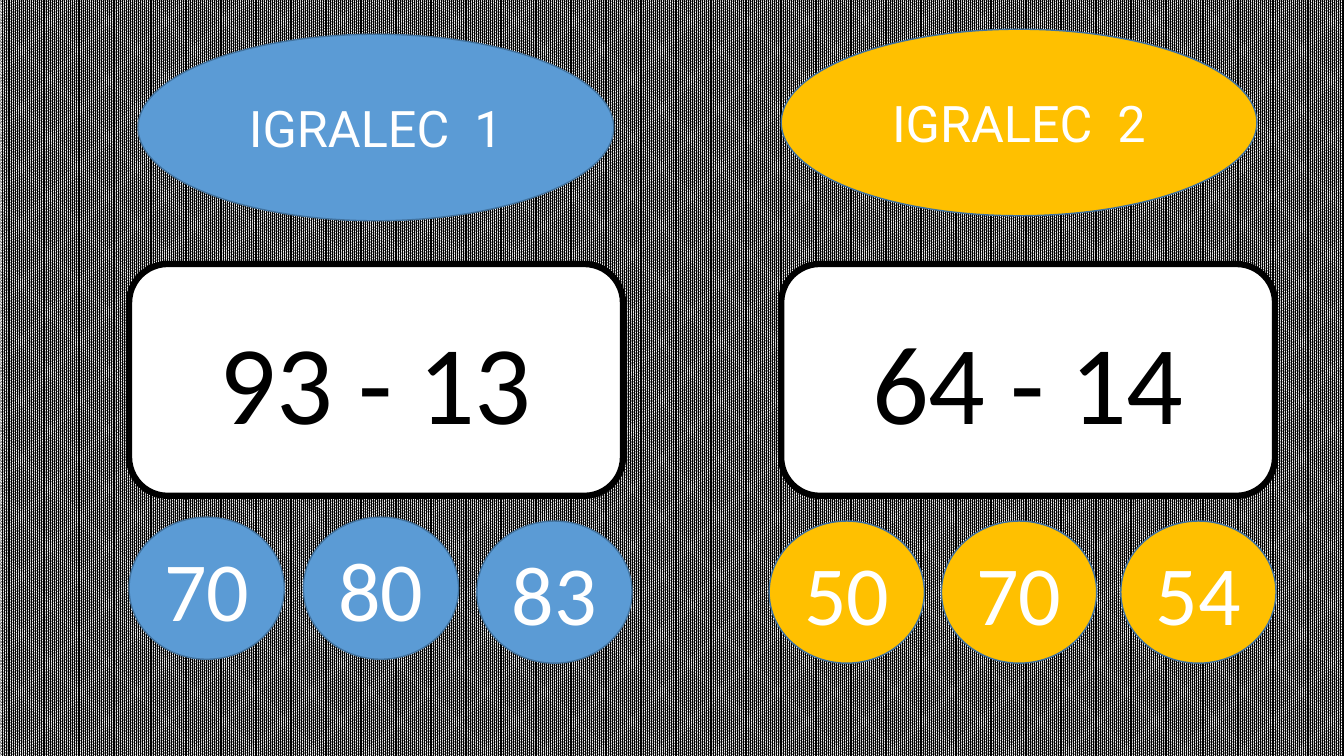
from dataclasses import dataclass

from pptx import Presentation
from pptx.dml.color import RGBColor
from pptx.enum.dml import MSO_PATTERN
from pptx.enum.shapes import MSO_SHAPE
from pptx.enum.text import MSO_ANCHOR, PP_ALIGN
from pptx.util import Pt


@dataclass(frozen=True)
class Theme:
    black: str = "000000"
    white: str = "FFFFFF"
    blue: str = "5B9BD5"
    gold: str = "FFC000"
    outline: str = "43739E"
    title_font: str = "Roboto"
    number_font: str = "Calibri"
    title_size: int = 36
    problem_size: int = 80
    answer_size: int = 60


THEME = Theme()

# Sizes in points: width, height
TITLE = (339.8, 133.2)
CARD = (352.8, 165.6)
ANSWER = (110.9, 101.5)
CARD_TOP = 188.6

# Positions in points: left, top
PLAYERS = [
    {
        "name": "IGRALEC  1", "color": THEME.blue, "title_at": (98.6, 24.5),
        "problem": "93 - 13", "card_left": 92.2,
        "answers": [("70", 92.2, 369.4), ("80", 216.7, 369.4), ("83", 340.6, 372.2)],
    },
    {
        "name": "IGRALEC  2", "color": THEME.gold, "title_at": (558, 20.9),
        "problem": "64 - 14", "card_left": 558,
        "answers": [("50", 549.4, 372.2), ("70", 672.5, 372.2), ("54", 800.6, 372.2)],
    },
]


def rgb(color):
    return RGBColor.from_string(color)


def write_text(shape, text, *, size, font=THEME.number_font, color=THEME.white):
    frame = shape.text_frame
    frame.word_wrap = True
    frame.vertical_anchor = MSO_ANCHOR.MIDDLE
    paragraph = frame.paragraphs[0]
    paragraph.alignment = PP_ALIGN.CENTER
    run = paragraph.add_run()
    run.text = text
    run.font.size = Pt(size)
    run.font.name = font
    run.font.color.rgb = rgb(color)


def add_figure(slide, kind, position, size, *, fill, line=THEME.outline, weight=1):
    figure = slide.shapes.add_shape(kind, *map(Pt, position + size))
    figure.shadow.inherit = False
    figure.fill.solid()
    figure.fill.fore_color.rgb = rgb(fill)
    figure.line.color.rgb = rgb(line)
    figure.line.width = Pt(weight)
    return figure


def add_title(slide, name, position, color):
    title = add_figure(slide, MSO_SHAPE.OVAL, position, TITLE, fill=color)
    write_text(title, name, size=THEME.title_size, font=THEME.title_font)


def add_problem(slide, problem, left):
    card = add_figure(slide, MSO_SHAPE.ROUNDED_RECTANGLE, (left, CARD_TOP), CARD,
                      fill=THEME.white, line=THEME.black, weight=4.5)
    write_text(card, problem, size=THEME.problem_size, color=THEME.black)


def add_answer(slide, number, position, color):
    answer = add_figure(slide, MSO_SHAPE.OVAL, position, ANSWER, fill=color)
    write_text(answer, number, size=THEME.answer_size)


def paint_background(slide):
    fill = slide.background.fill
    fill.patterned()
    fill.pattern = MSO_PATTERN.PERCENT_90
    fill.fore_color.rgb = rgb(THEME.black)
    fill.back_color.rgb = rgb(THEME.white)


def main():
    deck = Presentation()
    deck.slide_width, deck.slide_height = Pt(960), Pt(540)
    slide = deck.slides.add_slide(deck.slide_layouts[6])
    paint_background(slide)

    # One side per player: title, problem, possible answers
    for player in PLAYERS:
        add_title(slide, player["name"], player["title_at"], player["color"])
        add_problem(slide, player["problem"], player["card_left"])
        for number, left, top in player["answers"]:
            add_answer(slide, number, (left, top), player["color"])

    deck.save("out.pptx")


if __name__ == "__main__":
    main()
